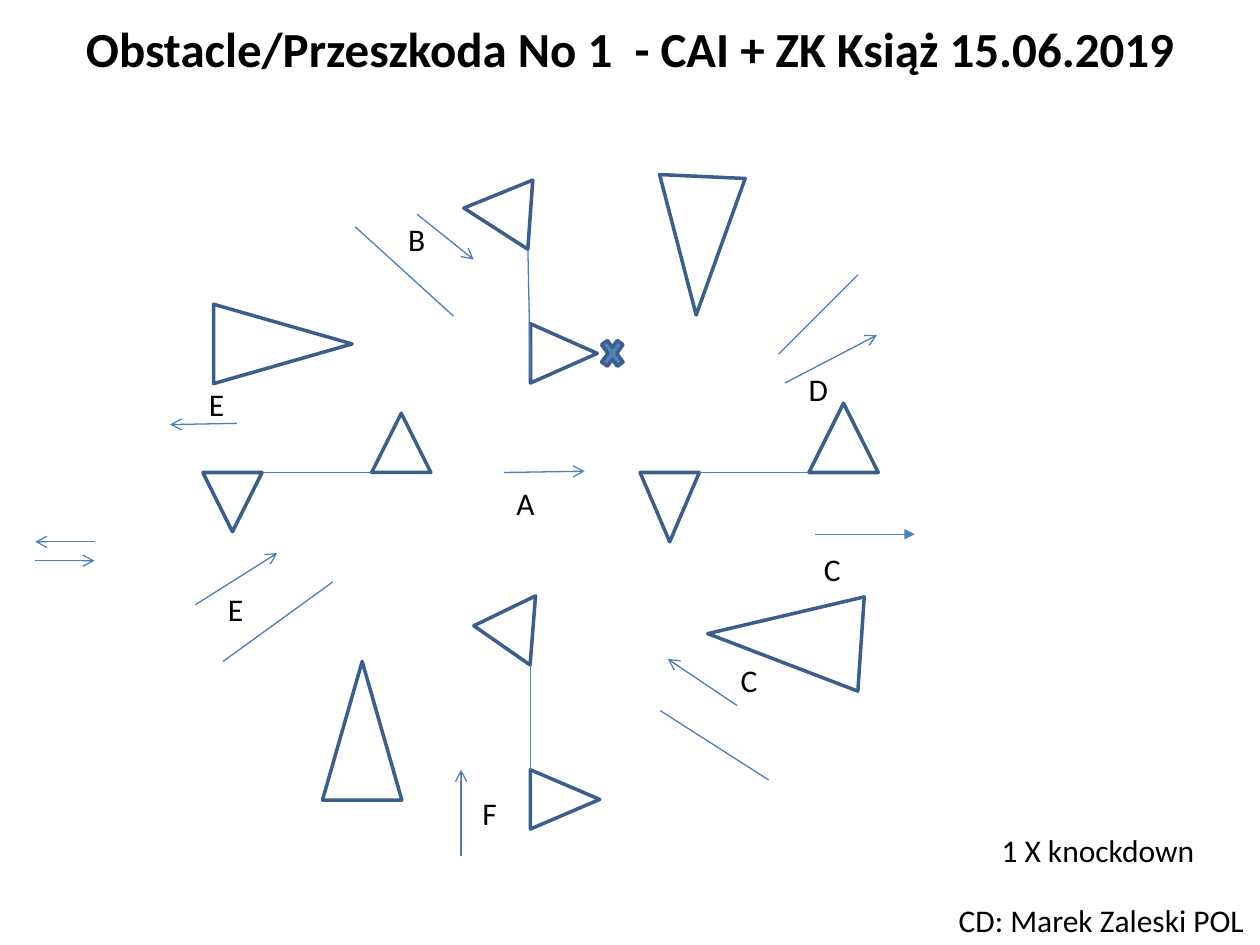
from pptx import Presentation
from pptx.dml.color import RGBColor
from pptx.enum.shapes import MSO_CONNECTOR as CONN, MSO_SHAPE as SHAPE
from pptx.enum.text import MSO_ANCHOR as ANCHOR, PP_ALIGN as ALIGN
from pptx.oxml.ns import qn
from pptx.util import Inches, Pt
from lxml.etree import SubElement


def rgb(value):
    return RGBColor.from_string(value)


class CourseMap:
    """Style of the obstacle plan and the slide it is drawn on."""
    FONT, TEXT = "Calibri", "000000"
    ROUTE, EDGE, FILL = "4B7EBC", "3A5F8C", "4F81BD"

    def __init__(self, slide):
        self.s = slide

    def text(self, words, x, y, w, h=0.4, size=18, bold=False,
             align=ALIGN.LEFT, anchor=ANCHOR.TOP, wrap=False):
        tf = self.s.shapes.add_textbox(*map(Inches, (x, y, w, h))).text_frame
        tf.word_wrap = wrap
        tf.vertical_anchor = anchor
        p = tf.paragraphs[0]
        p.alignment = align
        r = p.add_run()
        r.text = words
        r.font.name, r.font.size, r.font.bold = self.FONT, Pt(size), bold
        r.font.color.rgb = rgb(self.TEXT)

    def line(self, x1, y1, x2, y2, head=None):
        c = self.s.shapes.add_connector(
            CONN.STRAIGHT, *map(Inches, (x1, y1, x2, y2)))
        c.line.color.rgb = rgb(self.ROUTE)
        c.line.width = Pt(0.75)
        if head:
            SubElement(c.line._get_or_add_ln(), qn("a:tailEnd"), type=head)
        SubElement(c._element.spPr, qn("a:effectLst"))

    def shape(self, kind, x, y, w, h, rotation=0, fill=None):
        sp = self.s.shapes.add_shape(kind, *map(Inches, (x, y, w, h)))
        sp.rotation = rotation
        sp.shadow.inherit = False
        if fill:
            sp.fill.solid()
            sp.fill.fore_color.rgb = rgb(fill)
        else:
            sp.fill.background()
        sp.line.color.rgb = rgb(self.EDGE)
        sp.line.width = Pt(2)
        return sp

    def triangle(self, x, y, w, h, rotation=0, apex=0.5):
        sp = self.shape(SHAPE.ISOSCELES_TRIANGLE, x, y, w, h, rotation)
        sp.adjustments[0] = apex


GATE_MARKERS = [
    (1.61, 3.75, 0.47, 0.47, 180), (2.95, 3.28, 0.47, 0.47),
    (5.08, 3.75, 0.47, 0.55, 180), (6.42, 3.2, 0.55, 0.55),
    (3.67, 1.42, 0.55, 0.53, 274.1, 0.527), (4.24, 2.54, 0.47, 0.53, 90),
    (3.72, 4.75, 0.55, 0.47, 274.5), (4.25, 6.07, 0.47, 0.55, 90),
]
CORNER_MARKERS = [
    (5.21, 1.4, 0.68, 1.1, 182.6), (5.85, 4.46, 0.75, 1.22, 273.9),
    (2.56, 5.25, 0.63, 1.1), (1.93, 2.18, 0.63, 1.1, 90),
]
GATE_LINES = [
    (2.09, 3.75, 2.95, 3.75), (5.55, 3.75, 6.42, 3.75),
    (4.19, 1.98, 4.21, 3), (4.21, 5.28, 4.21, 6.11),
]
RAILS = [
    (5.24, 5.64, 6.1, 6.19), (6.18, 2.81, 6.81, 2.18),
    (3.6, 2.51, 2.82, 1.8), (2.64, 4.62, 1.77, 5.25),
]
ARROWS = [
    (0.28, 4.45, 0.75, 4.45), (0.75, 4.3, 0.28, 4.3),
    (4, 3.75, 4.64, 3.74), (3.31, 1.7, 3.76, 2.06),
    (1.55, 4.8, 2.2, 4.39), (5.85, 5.6, 5.3, 5.23),
    (1.88, 3.36, 1.35, 3.37), (6.23, 3.04, 6.96, 2.66),
    (3.66, 6.79, 3.66, 6.11),
]
GATE_LETTERS = [
    ("A", 4, 3.79, 0.35), ("B", 3.14, 1.7, 0.34), ("C", 5.78, 5.2, 0.34),
    ("C", 6.44, 4.32, 0.34), ("D", 6.32, 2.89, 0.36),
    ("E", 1.56, 3.01, 0.32), ("E", 1.71, 4.63, 0.33),
    ("F", 3.73, 6.25, 0.32),
]


def main():
    prs = Presentation()
    prs.slide_width, prs.slide_height = Inches(10), Inches(7.5)
    plan = CourseMap(prs.slides.add_slide(prs.slide_layouts[6]))

    plan.text("Obstacle/Przeszkoda No 1  - CAI + ZK Książ 15.06.2019",
              0, 0, 10, 0.76, size=28, bold=True, align=ALIGN.CENTER,
              anchor=ANCHOR.MIDDLE, wrap=True)
    for marker in GATE_MARKERS + CORNER_MARKERS:
        plan.triangle(*marker)
    for ends in GATE_LINES + RAILS:
        plan.line(*ends)
    for ends in ARROWS:
        plan.line(*ends, head="arrow")
    plan.line(6.47, 4.24, 7.26, 4.24, head="triangle")
    for letter in GATE_LETTERS:
        plan.text(*letter)
    plan.shape(SHAPE.MATH_MULTIPLY, 4.74, 2.64, 0.24, 0.33, fill=plan.FILL)
    plan.text("1 X knockdown", 7.85, 6.55, 1.81, wrap=True)
    plan.text("CD: Marek Zaleski POL", 7.51, 7.1, 2.49)

    prs.save("out.pptx")


if __name__ == "__main__":
    main()
